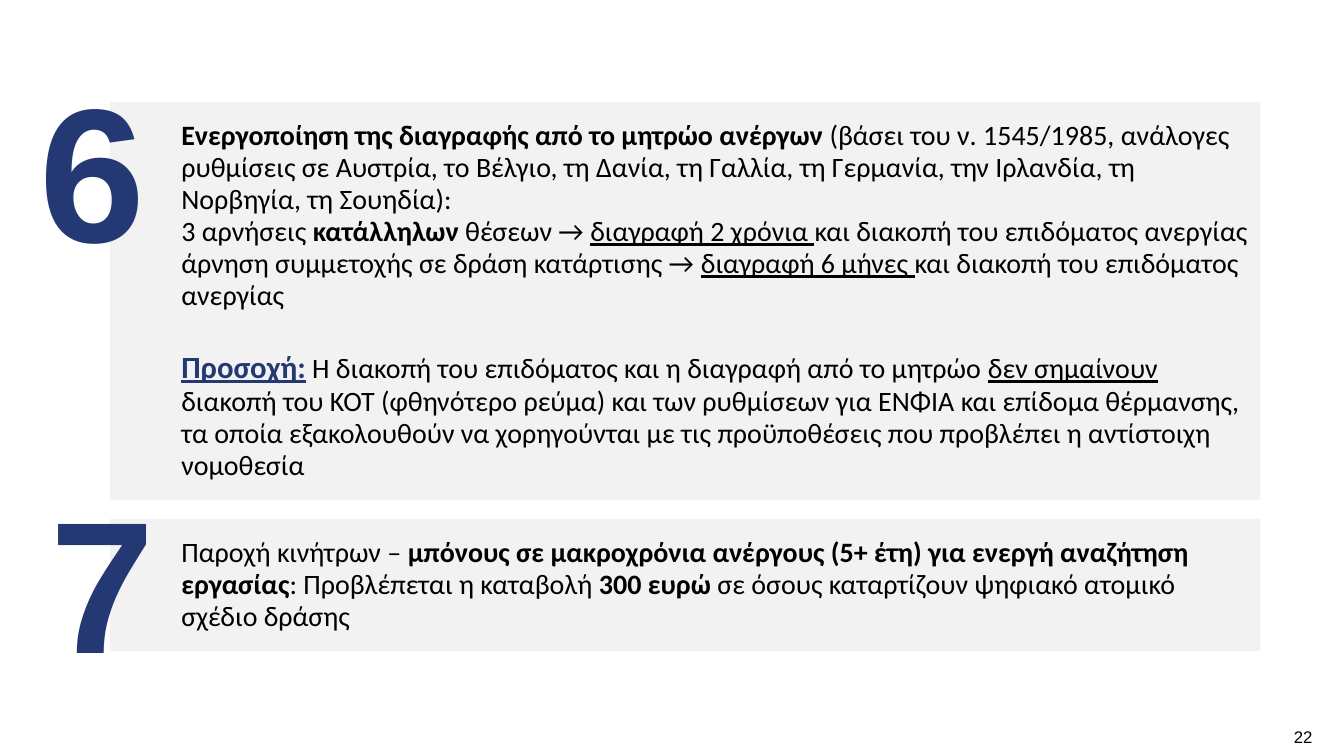
from pptx import Presentation
from pptx.dml.color import RGBColor
from pptx.enum.shapes import MSO_SHAPE as Preset
from pptx.enum.text import MSO_ANCHOR as Anchor, PP_ALIGN as Align
from pptx.util import Inches, Pt

WIDTH, HEIGHT = 13.34, 7.5
NAVY, BLACK, PANEL_GREY = "243873", "000000", "F2F2F2"

PLAIN = {"name": "Calibri", "size": 20, "color": BLACK}
BOLD = {**PLAIN, "bold": True}
UNDERLINED = {**PLAIN, "underline": True}
NOTICE = {**BOLD, "size": 22, "color": NAVY, "underline": True}
PAGE = {"name": "Arial", "size": 12, "color": BLACK}
NUMERAL = {"name": "Arial", "bold": True, "color": NAVY}

INCENTIVES = [
    [
        ("Παροχή κινήτρων – ", PLAIN),
        ("μπόνους σε μακροχρόνια ανέργους (5+ έτη) για ενεργή αναζήτηση εργασίας", BOLD),
        (": Προβλέπεται η καταβολή ", PLAIN),
        ("300 ευρώ ", BOLD),
        ("σε όσους καταρτίζουν ψηφιακό ατομικό σχέδιο δράσης", PLAIN),
    ],
]
DELETION = [
    [
        ("Ενεργοποίηση της διαγραφής από το μητρώο ανέργων ", BOLD),
        ("(βάσει του ν. 1545/1985, ανάλογες ρυθμίσεις σε Αυστρία, το Βέλγιο, τη Δανία, "
         "τη Γαλλία, τη Γερμανία, την Ιρλανδία, τη Νορβηγία, τη Σουηδία):\n3 αρνήσεις ", PLAIN),
        ("κατάλληλων", BOLD),
        (" θέσεων → ", PLAIN),
        ("διαγραφή 2 χρόνια ", UNDERLINED),
        ("και διακοπή του επιδόματος ανεργίας\n"
         "άρνηση συμμετοχής σε δράση κατάρτισης → ", PLAIN),
        ("διαγραφή 6 μήνες ", UNDERLINED),
        ("και διακοπή του επιδόματος ανεργίας", PLAIN),
    ],
    [
        ("Προσοχή:", NOTICE),
        (" Η διακοπή του επιδόματος και η διαγραφή από το μητρώο ", PLAIN),
        ("δεν σημαίνουν ", UNDERLINED),
        ("διακοπή του ΚΟΤ (φθηνότερο ρεύμα) και των ρυθμίσεων για ΕΝΦΙΑ και επίδομα "
         "θέρμανσης, τα οποία εξακολουθούν να χορηγούνται με τις προϋποθέσεις που "
         "προβλέπει η αντίστοιχη νομοθεσία", PLAIN),
    ],
]

PANEL_LEFT, PANEL_WIDTH = 1.09, 11.42
PANEL_INSETS = (0.71, 0.08, 0.08, 0.08)
MEASURES = [
    {"panel": (5.15, 1.31), "body": INCENTIVES, "numeral": "7", "size": 134,
     "numeral_box": (0.49, 4.95, 1.06, 1.92)},
    {"panel": (1.01, 3.95), "body": DELETION, "numeral": "6", "size": 136,
     "numeral_box": (0.39, 0.85, 1.06, 1.95)},
]
PARAGRAPH_GAP, LAST_GAP = 27.6, 8


def rgb(color):
    return RGBColor.from_string(color)


def add_runs(paragraph, segments):
    for text, style in segments:
        for index, line in enumerate(text.split("\n")):
            if index:
                paragraph.add_line_break()
            run = paragraph.add_run()
            run.text = line
            for key, value in style.items():
                if key == "color":
                    run.font.color.rgb = rgb(value)
                else:
                    setattr(run.font, key, Pt(value) if key == "size" else value)


def write(shape, paragraphs, insets, spacing, last_gap, align, anchor, wrap=True):
    frame = shape.text_frame
    frame.word_wrap = wrap
    frame.vertical_anchor = anchor
    for side, inset in zip(("left", "top", "right", "bottom"), insets):
        setattr(frame, f"margin_{side}", Inches(inset))
    for index, segments in enumerate(paragraphs):
        paragraph = frame.add_paragraph() if index else frame.paragraphs[0]
        last = index == len(paragraphs) - 1
        layout = {"alignment": align, "line_spacing": spacing,
                  "space_after": Pt(last_gap if last else PARAGRAPH_GAP)}
        for key, value in layout.items():
            setattr(paragraph, key, value)
        add_runs(paragraph, segments)


def add_panel(slide, top, height, body):
    box = map(Inches, (PANEL_LEFT, top, PANEL_WIDTH, height))
    panel = slide.shapes.add_shape(Preset.RECTANGLE, *box)
    panel.shadow.inherit = False
    panel.fill.solid()
    panel.fill.fore_color.rgb = rgb(PANEL_GREY)
    panel.line.fill.background()
    write(panel, body, PANEL_INSETS, 0.95, LAST_GAP, Align.LEFT, Anchor.MIDDLE)


def add_label(slide, box, text, style, **layout):
    label = slide.shapes.add_textbox(*map(Inches, box))
    write(label, [[(text, style)]], align=Align.CENTER, **layout)


def main():
    presentation = Presentation()
    presentation.slide_width, presentation.slide_height = Inches(WIDTH), Inches(HEIGHT)
    slide = presentation.slides.add_slide(presentation.slide_layouts[6])
    add_label(slide, (12.77, 7.15, 0.33, 0.31), "22", PAGE, insets=(0.06,) * 4,
              spacing=1.0, last_gap=0, anchor=Anchor.TOP, wrap=False)
    for measure in MEASURES:
        add_panel(slide, *measure["panel"], measure["body"])
        add_label(slide, measure["numeral_box"], measure["numeral"],
                  {**NUMERAL, "size": measure["size"]}, insets=(0,) * 4,
                  spacing=0.85, last_gap=6, anchor=Anchor.MIDDLE)
    presentation.save("out.pptx")


if __name__ == "__main__":
    main()
